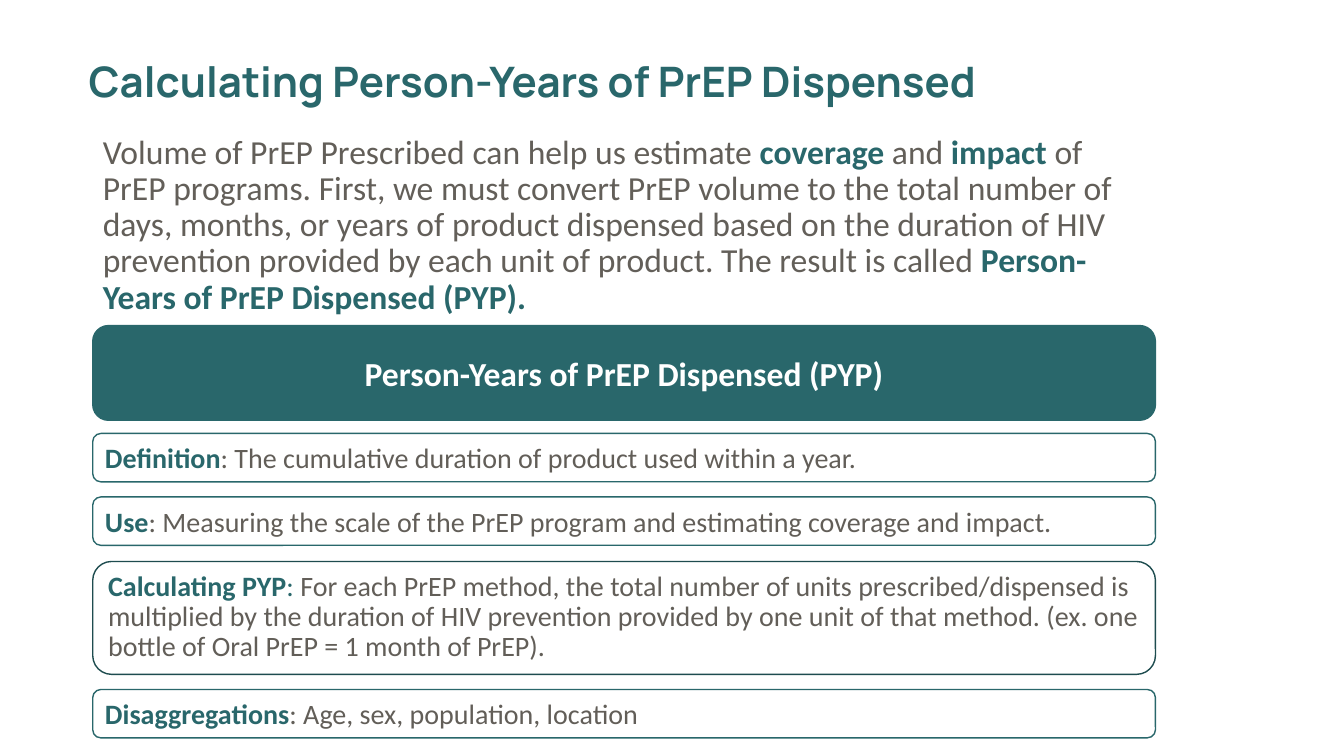
from lxml.etree import SubElement
from pptx import Presentation
from pptx.dml.color import RGBColor
from pptx.enum.shapes import MSO_SHAPE
from pptx.enum.text import MSO_ANCHOR, MSO_AUTO_SIZE, PP_ALIGN
from pptx.oxml.ns import qn
from pptx.util import Inches, Pt

COLORS = {"teal": "29676B", "dark_teal": "1E4C4F", "gray": "625E58",
          "body_gray": "635F59", "white": "FFFFFF"}
LEFT, WIDTH = 0.92, 10.54
ROW_HEIGHT = 0.48


class SlideBuilder:
    """Holds the style and the current slide."""

    def __init__(self, slide):
        self.slide = slide

    def color(self, name):
        return RGBColor.from_string(COLORS[name])

    def place(self, shape, left, top, width, height):
        shape.left, shape.top = Inches(left), Inches(top)
        shape.width, shape.height = Inches(width), Inches(height)

    def add_runs(self, paragraph, runs, size, font="Calibri", align=PP_ALIGN.LEFT, spacing=1.0):
        paragraph.alignment = align
        paragraph.line_spacing = spacing
        paragraph.space_before = Pt(0)
        for words, color, bold in runs:
            run = paragraph.add_run()
            run.text = words
            run.font.name, run.font.size, run.font.bold = font, Pt(size), bold
            run.font.color.rgb = self.color(color)

    def title(self, words):
        heading = self.slide.shapes.title
        self.place(heading, 0, 0.21, 11.5, 1.25)
        frame = heading.text_frame
        frame.auto_size = MSO_AUTO_SIZE.NONE
        frame.vertical_anchor = MSO_ANCHOR.MIDDLE
        frame.margin_left = Inches(0.88)
        self.add_runs(frame.paragraphs[0], [(words, "teal", True)], 30, "Manrope", spacing=0.9)

    def body(self, runs):
        introduction = self.slide.placeholders[1]
        self.place(introduction, LEFT, 1.29, 10.58, 2.4)
        frame = introduction.text_frame
        frame.auto_size = MSO_AUTO_SIZE.NONE
        frame.vertical_anchor = MSO_ANCHOR.TOP
        paragraph = frame.paragraphs[0]
        properties = paragraph._p.get_or_add_pPr()
        properties.set("marL", "0")
        properties.set("indent", "0")
        SubElement(properties, qn("a:buNone"))
        self.add_runs(paragraph, runs, 24, spacing=0.9)

    def box(self, top, height, line, fill=None):
        panel = self.slide.shapes.add_shape(
            MSO_SHAPE.ROUNDED_RECTANGLE,
            Inches(LEFT), Inches(top), Inches(WIDTH), Inches(height))
        panel.shadow.inherit = False
        panel.line.color.rgb = self.color(line)
        panel.line.width = Pt(1)
        if fill:
            panel.fill.solid()
            panel.fill.fore_color.rgb = self.color(fill)
        else:
            panel.fill.background()
        panel.text_frame.word_wrap = True
        return panel.text_frame

    def banner(self, words):
        frame = self.box(3.23, 0.94, "teal", "teal")
        frame.vertical_anchor = MSO_ANCHOR.MIDDLE
        self.add_runs(frame.paragraphs[0], [(words, "white", True)], 24, align=PP_ALIGN.CENTER)

    def card(self, top, runs, height=ROW_HEIGHT, line="teal", spacing=1.0):
        frame = self.box(top, height, line)
        frame.vertical_anchor = MSO_ANCHOR.TOP
        frame.auto_size = MSO_AUTO_SIZE.SHAPE_TO_FIT_TEXT
        self.add_runs(frame.paragraphs[0], runs, 20, spacing=spacing)


def main():
    presentation = Presentation()
    presentation.slide_width, presentation.slide_height = Inches(13.33), Inches(7.5)
    builder = SlideBuilder(presentation.slides.add_slide(presentation.slide_layouts[1]))

    builder.title("Calculating Person-Years of PrEP Dispensed")
    builder.body([
        ("Volume of PrEP Prescribed ", "gray", False),
        ("can help us estimate ", "body_gray", False),
        ("coverage", "teal", True),
        (" and ", "body_gray", False),
        ("impact", "teal", True),
        (" of PrEP programs. First, we must convert PrEP volume to the total number of "
         "days, months, or years of product dispensed based on the duration of HIV "
         "prevention provided by each unit of product. The result is called ",
         "body_gray", False),
        ("Person-Years of PrEP Dispensed (PYP).", "teal", True),
    ])
    builder.banner("Person-Years of PrEP Dispensed (PYP)")

    for top, term, explanation in (
        (4.3, "Definition", ": The cumulative duration of product used within a year."),
        (4.93, "Use", ": Measuring the scale of the PrEP program and estimating "
                      "coverage and impact."),
        (6.84, "Disaggregations", ": Age, sex, population, location"),
    ):
        builder.card(top, [(term, "teal", True), (explanation, "gray", False)])

    builder.card(5.57, [
        ("Calculating PYP", "teal", True),
        (": ", "teal", False),
        ("For each PrEP method, the total number of units prescribed/dispensed is "
         "multiplied by the duration of HIV prevention provided by one unit of that "
         "method. (ex. one bottle of Oral PrEP = 1 month of PrEP).", "gray", False),
    ], height=1.12, line="dark_teal", spacing=0.9)

    presentation.save("out.pptx")


if __name__ == "__main__":
    main()
